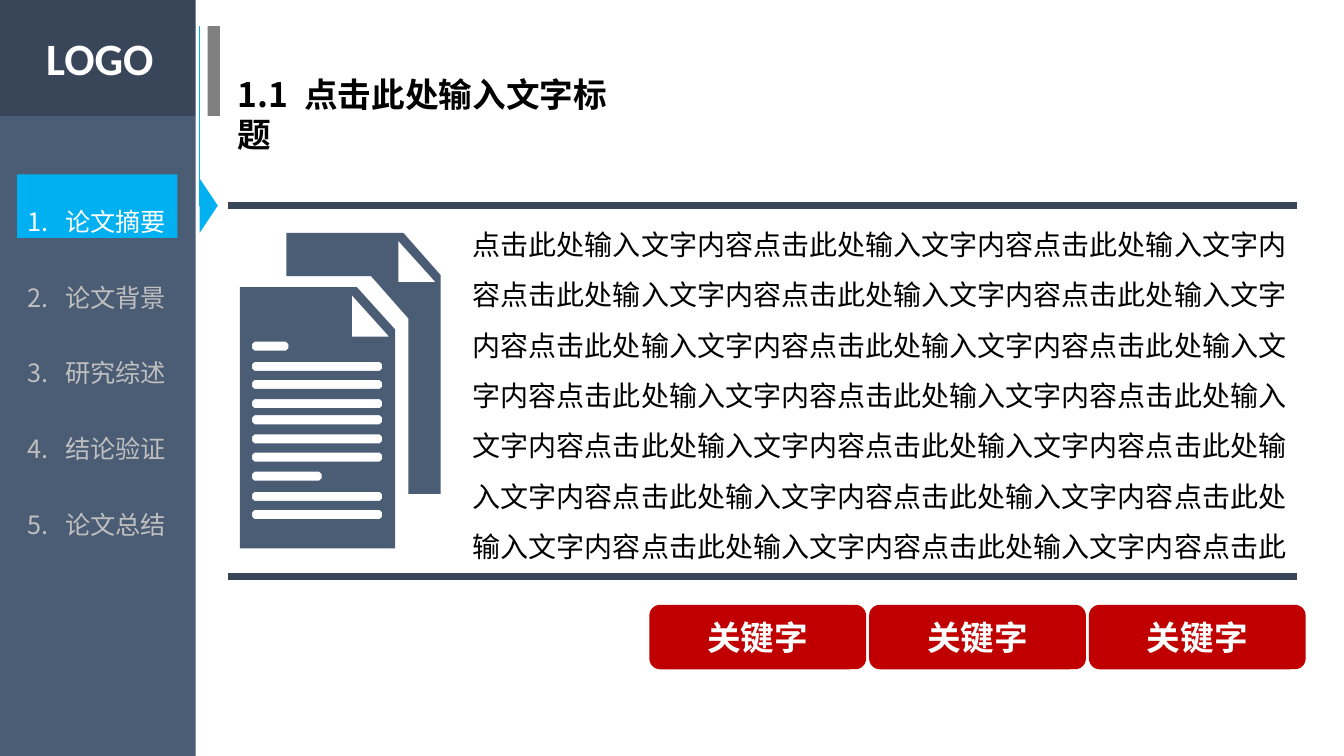
from lxml import etree
from pptx import Presentation
from pptx import util as u
from pptx.dml.color import RGBColor
from pptx.enum import shapes, text
from pptx.oxml.ns import qn

CELL = u.Inches(0.1)
COLS, ROWS = 133.3, 75
COLORS = {
    "panel": "4B5C75", "dark": "394659", "accent": "00B0F0", "grey": "808080",
    "muted": "BFBFBF", "keyword": "C00000", "white": "FFFFFF", "black": "000000",
}
CJK = "Noto Sans CJK SC"
SECTIONS = ["论文摘要", "论文背景", "研究综述", "结论验证", "论文总结"]
BODY = "点击此处输入文字内容" * 20 + "点击此"


def cells(*values):
    """Convert grid cells to whole EMU lengths."""
    return [u.Emu(round(v * CELL)) for v in values]


def rgb(name):
    """Look up a named colour."""
    return RGBColor.from_string(COLORS[name])


def paint(sp, color):
    """Give a shape a flat fill without outline or shadow."""
    sp.shadow.inherit = False
    sp.fill.solid()
    sp.fill.fore_color.rgb = rgb(color)
    sp.line.fill.background()
    return sp


def add_block(s, kind, box, color):
    """Add a flat preset shape in the given box."""
    return paint(s.shapes.add_shape(kind, *cells(*box)), color)


def add_rule(s, start, end, color, width):
    """Add a straight line between two grid points."""
    line = s.shapes.add_connector(shapes.MSO_CONNECTOR.STRAIGHT, *cells(*start, *end))
    line.line.color.rgb = rgb(color)
    line.line.width = u.Pt(width)
    etree.SubElement(line._element.spPr, qn("a:effectLst"))


def write(p, words, size=18, color="black", bold=False, font=CJK, track=0):
    """Add a formatted run to a paragraph."""
    r = p.add_run()
    r.text = words
    r.font.size = u.Pt(size)
    r.font.bold = bold
    r.font.color.rgb = rgb(color)
    r.font.name = font
    props = r._r.get_or_add_rPr()
    etree.SubElement(props, qn("a:ea"), typeface=font)
    if track:
        props.set("spc", str(track))


def add_text_frame(s, box, wrap=True):
    """Add a text box that grows with its text."""
    tf = s.shapes.add_textbox(*cells(*box)).text_frame
    tf.word_wrap = wrap
    tf.auto_size = text.MSO_AUTO_SIZE.SHAPE_TO_FIT_TEXT
    return tf


def add_sidebar(s, x, y, w, h, current=0):
    """Draw the sidebar with its heading, section list and marker."""
    head = 11.5
    rect = shapes.MSO_SHAPE.RECTANGLE
    add_block(s, rect, (x, y + head, w, h - head), "panel")
    add_block(s, rect, (x, y, w, head), "dark")
    add_block(s, rect, (x + 1.7, y + 17.3, 15.9, 6.3), "accent")
    arrow = add_block(s, shapes.MSO_SHAPE.ISOSCELES_TRIANGLE,
                      (x + 18, y + 19.5, 5.4, 1.8), "accent")
    arrow.rotation = 90
    tf = add_text_frame(s, (x + 3.6, y + 2.6, 12.8, 6.4), wrap=False)
    write(tf.paragraphs[0], "LOGO", size=32, color="white", bold=True, font="Calibri")
    tf = add_text_frame(s, (x + 1.7, y + 15.5, 15.9, 38.9), wrap=False)
    for i, section in enumerate(SECTIONS):
        p = tf.paragraphs[0] if i == 0 else tf.add_paragraph()
        p.line_spacing = 2.5
        props = p._p.get_or_add_pPr()
        props.set("marL", str(u.Inches(0.38)))
        props.set("indent", str(-u.Inches(0.38)))
        etree.SubElement(props, qn("a:buFont"), typeface="+mj-lt")
        etree.SubElement(props, qn("a:buAutoNum"), type="arabicPeriod")
        write(p, section, color="white" if i == current else "muted")


def add_heading(s, x, y, w, h):
    """Draw the heading with its thin line and grey bar."""
    add_rule(s, (x, y + 17.8), (x, y), "accent", 0.5)
    add_block(s, shapes.MSO_SHAPE.RECTANGLE, (x + 0.8, y, 1.2, h), "grey")
    p = add_text_frame(s, (x + 2.8, y + 4.2, w - 2.8, 5)).paragraphs[0]
    write(p, "1.1", size=24, bold=True)
    write(p, " ", size=24, bold=True, track=600)
    write(p, "点击此处输入文字标题", size=24, bold=True)


def bar_outline(x, y, w, h=0.9):
    """Return the corners of a text bar with bevelled ends."""
    dx, dy = 0.25, h / 4
    return [(x + dx, y), (x + w - dx, y), (x + w, y + dy), (x + w, y + h - dy),
            (x + w - dx, y + h), (x + dx, y + h), (x, y + h - dy), (x, y + dy)]


def add_document_icon(s, x, y):
    """Draw two stacked pages with folded corners and text bars."""
    front = [(0, 5.4), (11.6, 5.4), (15.4, 9.6), (15.4, 31.3), (0, 31.3)]
    back = [(4.6, 0), (16.2, 0), (19.9, 4.2), (19.9, 25.9),
            (16.7, 25.9), (16.7, 8.5), (13, 4.3), (4.6, 4.3)]
    fold = [(11.1, 6.2), (11.1, 10.3), (14.8, 10.3)]
    back_fold = [(px + 4.6, py - 5.4) for px, py in fold]
    tops = [10.8, 12.8, 14.6, 16.5, 18.1, 20, 21.8, 23.7, 25.7, 27.5]
    short = {10.8: 3.6, 23.7: 6.9}
    bars = [bar_outline(1.2, top, short.get(top, 12.9)) for top in tops]
    builder = None
    for outline in [front, back, fold, back_fold, *bars]:
        points = [cells(x + px, y + py) for px, py in outline]
        if builder is None:
            builder = s.shapes.build_freeform(*points[0], scale=1.0)
        else:
            builder.move_to(*points[0])
        builder.add_line_segments(points[1:], close=True)
    paint(builder.convert_to_shape(), "panel")


def add_content(s, x, y, w, h):
    """Draw the ruled area holding the icon and body text."""
    for level in (y, y + h):
        add_rule(s, (x, level), (x + w, level), "dark", 4.5)
    add_document_icon(s, x + 1.2, y + 2.7)
    p = add_text_frame(s, (x + 23.3, y, 83.9, h - 0.4)).paragraphs[0]
    p.line_spacing = 1.5
    write(p, BODY, size=20)


def add_keywords(s, x, y, w, h, count=3, gap=0.3):
    """Spread equal keyword buttons across the box."""
    width = (w - gap * (count - 1)) / count
    for i in range(count):
        box = (x + i * (width + gap), y, width, h)
        sp = add_block(s, shapes.MSO_SHAPE.ROUNDED_RECTANGLE, box, "keyword")
        tf = sp.text_frame
        tf.vertical_anchor = text.MSO_ANCHOR.MIDDLE
        p = tf.paragraphs[0]
        p.alignment = text.PP_ALIGN.CENTER
        write(p, "关键字", size=24, color="white", bold=True)


def main():
    """Build the slide and save it."""
    prs = Presentation()
    prs.slide_width, prs.slide_height = cells(COLS, ROWS)
    s = prs.slides.add_slide(prs.slide_layouts[6])
    add_sidebar(s, 0, 0, 19.4, ROWS)
    add_heading(s, 19.8, 2.6, 44.5, 8.9)
    add_content(s, 22.6, 20.4, 106, 36.8)
    add_keywords(s, 64.4, 60, 65.1, 6.4)
    prs.save("out.pptx")


if __name__ == "__main__":
    main()
